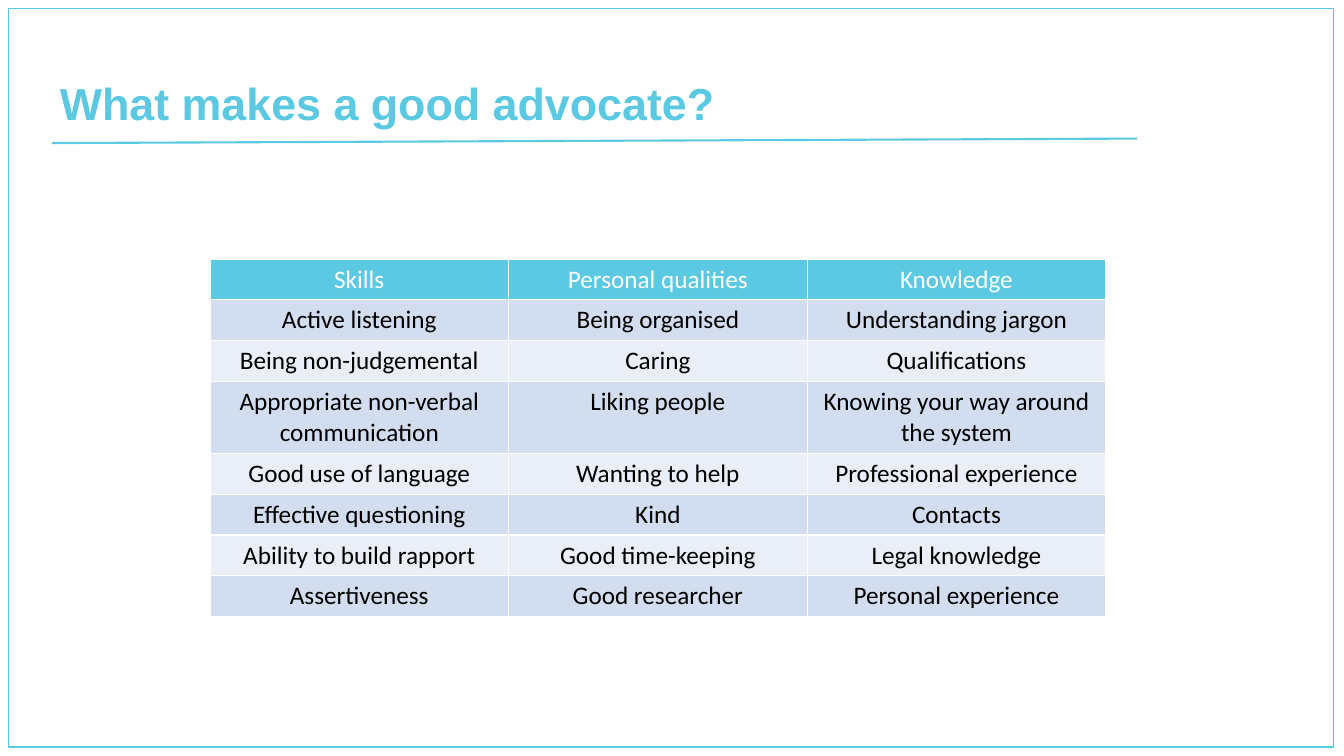
from lxml import etree
from pptx import Presentation
from pptx.dml.color import RGBColor
from pptx.enum.shapes import MSO_CONNECTOR, MSO_SHAPE
from pptx.enum.text import MSO_ANCHOR, PP_ALIGN
from pptx.oxml.ns import qn
from pptx.util import Pt

STRAIGHT = MSO_CONNECTOR.STRAIGHT
RECTANGLE = MSO_SHAPE.RECTANGLE
BOTTOM = MSO_ANCHOR.BOTTOM
LEFT = PP_ALIGN.LEFT
CENTER = PP_ALIGN.CENTER
TITLE_ONLY = 5

CYAN = "5CC9E3"
WHITE = "FFFFFF"
BLACK = "000000"
BANDS = ("D2DEEF", "EAEFF7")

ADVOCATE_TRAITS = [
    ("Skills", "Personal qualities", "Knowledge"),
    ("Active listening", "Being organised", "Understanding jargon"),
    ("Being non-judgemental", "Caring", "Qualifications"),
    ("Appropriate non-verbal communication", "Liking people",
     "Knowing your way around the system"),
    ("Good use of language", "Wanting to help", "Professional experience"),
    ("Effective questioning", "Kind", "Contacts"),
    ("Ability to build rapport", "Good time-keeping", "Legal knowledge"),
    ("Assertiveness", "Good researcher", "Personal experience"),
]


def rgb(color):
    """Turn a hex string into a colour."""
    return RGBColor.from_string(color)


def write(frame, text, size=18, font="Calibri", color=BLACK, bold=False,
          align=CENTER, spacing=1.0):
    """Put one formatted paragraph into a text frame."""
    paragraph = frame.paragraphs[0]
    paragraph.alignment = align
    paragraph.line_spacing = spacing
    run = paragraph.add_run()
    run.text = text
    run.font.size = Pt(size)
    run.font.name = font
    run.font.bold = bold
    run.font.color.rgb = rgb(color)


def add_border(slide):
    """Frame the slide with a thin outline."""
    border = slide.shapes.add_shape(RECTANGLE, Pt(6), Pt(6), Pt(946.5), Pt(527.5))
    border.shadow.inherit = False
    border.fill.background()
    border.line.color.rgb = rgb(CYAN)
    border.line.width = Pt(1)


def add_title_rule(slide):
    """Draw the slightly rising line below the title."""
    rule = slide.shapes.add_connector(STRAIGHT, Pt(37), Pt(102.2), Pt(812.2), Pt(99))
    rule.line.color.rgb = rgb(CYAN)
    rule.line.width = Pt(1.5)
    etree.SubElement(rule._element.spPr, qn("a:effectLst"))


def set_title(slide, text):
    """Place and fill the title placeholder."""
    title = slide.shapes.title
    title.left, title.top = Pt(35.5), Pt(20.2)
    title.width, title.height = Pt(754.5), Pt(76.3)
    title.text_frame.word_wrap = True
    title.text_frame.vertical_anchor = BOTTOM
    write(title.text_frame, text, size=32, font="Arial", color=CYAN, bold=True,
          align=LEFT, spacing=0.9)


def add_traits_table(slide, rows, row_height=29.2, column_width=213.3):
    """Add the table with a cyan header and banded rows."""
    columns = len(rows[0])
    table = slide.shapes.add_table(
        len(rows), columns, Pt(150), Pt(185),
        Pt(column_width * columns), Pt(row_height * len(rows))).table
    for row_index, traits in enumerate(rows):
        is_header = row_index == 0
        fill = CYAN if is_header else BANDS[(row_index - 1) % 2]
        for column_index, trait in enumerate(traits):
            cell = table.cell(row_index, column_index)
            cell.fill.solid()
            cell.fill.fore_color.rgb = rgb(fill)
            write(cell.text_frame, trait, color=WHITE if is_header else BLACK)


def main():
    """Build and save the slide."""
    deck = Presentation()
    deck.slide_width, deck.slide_height = Pt(960), Pt(540)
    slide = deck.slides.add_slide(deck.slide_layouts[TITLE_ONLY])
    add_title_rule(slide)
    add_border(slide)
    set_title(slide, "What makes a good advocate?")
    add_traits_table(slide, ADVOCATE_TRAITS)
    deck.save("out.pptx")


if __name__ == "__main__":
    main()
